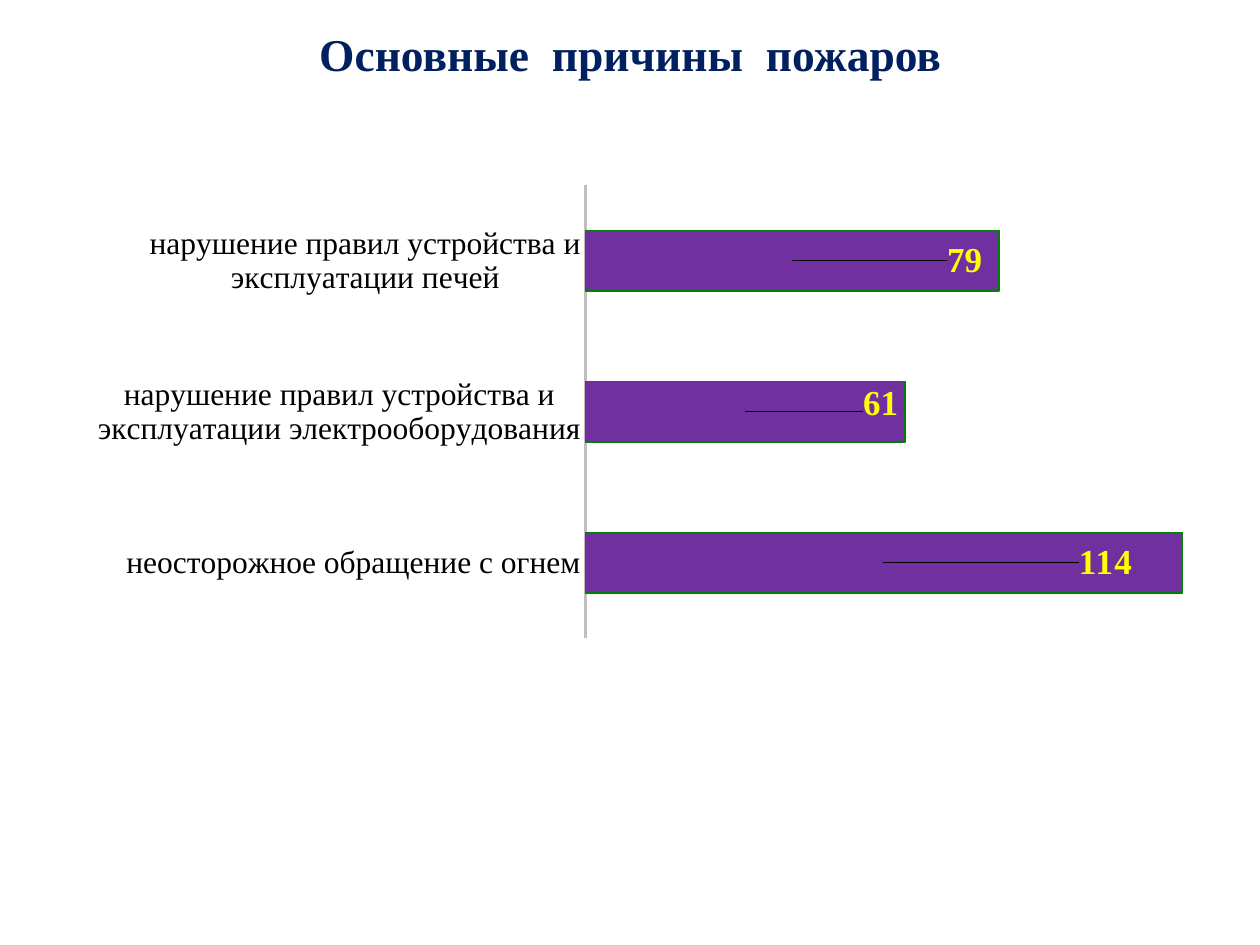
from lxml.etree import SubElement
from pptx import Presentation
from pptx.chart.data import CategoryChartData
from pptx.dml.color import RGBColor
from pptx.enum.chart import XL_CHART_TYPE, XL_LABEL_POSITION, XL_TICK_MARK
from pptx.enum.text import MSO_AUTO_SIZE, PP_ALIGN
from pptx.oxml.ns import qn
from pptx.util import Inches, Pt

NAVY = RGBColor(0x00, 0x20, 0x60)
PURPLE = RGBColor(0x70, 0x30, 0xA0)
GREEN = RGBColor(0x00, 0x80, 0x00)
YELLOW = RGBColor(0xFF, 0xFF, 0x00)
GREY = RGBColor(0xBF, 0xBF, 0xBF)
BLACK = RGBColor(0x00, 0x00, 0x00)
FONT = "Times New Roman"

TITLE = "Основные  причины  пожаров"
CAUSES = [
    ("неосторожное обращение с огнем", 114, (0.18, 0)),
    ("нарушение правил устройства и эксплуатации электрооборудования", 61, (0.11, -0.01)),
    ("нарушение правил устройства и эксплуатации печей", 79, (0.14, 0)),
]
TITLE_BOX = (1.02, 0.16, 7.97, 0.54)
CHART_BOX = (-0.04, 0.83, 9.77, 6.42)
PLOT_SHARES = {"x": 0.48, "y": 0.1, "w": 0.51, "h": 0.56}


def set_font(font, size, color, bold=False):
    formats = {"name": FONT, "size": Pt(size), "bold": bold}
    for attribute, value in formats.items():
        setattr(font, attribute, value)
    font.color.rgb = color


def fill_layout(layout, values):
    manual = SubElement(layout, qn("c:manualLayout"))
    for tag, value in values.items():
        SubElement(manual, qn(f"c:{tag}")).set("val", str(value))


def add_title(slide):
    title = slide.shapes.add_textbox(*map(Inches, TITLE_BOX))
    frame = title.text_frame
    frame.word_wrap = True
    frame.auto_size = MSO_AUTO_SIZE.SHAPE_TO_FIT_TEXT
    heading = frame.paragraphs[0]
    heading.alignment = PP_ALIGN.CENTER
    run = heading.add_run()
    run.text = TITLE
    set_font(run.font, 26, NAVY, True)


def add_causes_chart(slide):
    data = CategoryChartData()
    data.categories = [cause for cause, _, _ in CAUSES]
    data.add_series("Series 1", [fires for _, fires, _ in CAUSES])
    chart = slide.shapes.add_chart(
        XL_CHART_TYPE.BAR_STACKED, *map(Inches, CHART_BOX), data
    ).chart
    chart.has_legend = False
    chart.has_title = False
    set_font(chart.font, 10, BLACK)

    causes_axis = chart.category_axis
    causes_axis.major_tick_mark = XL_TICK_MARK.NONE
    causes_axis.format.line.color.rgb = GREY
    causes_axis.format.line.width = Pt(1.5)
    set_font(causes_axis.tick_labels.font, 18, BLACK)

    fires_axis = chart.value_axis
    fires_axis.minimum_scale, fires_axis.maximum_scale = 0, 120
    fires_axis.has_major_gridlines = False
    fires_axis.visible = False

    plot = chart.plots[0]
    plot.gap_width, plot.overlap = 150, 100
    plot.vary_by_categories = False
    bars = plot.series[0]
    bars.format.fill.solid()
    bars.format.fill.fore_color.rgb = PURPLE
    bars.format.line.color.rgb = GREEN
    bars.format.line.width = Pt(0.75)

    bars.data_labels.show_value = True
    set_font(bars.data_labels.font, 20, YELLOW, True)
    for index in range(len(CAUSES)):
        label = bars.points[index].data_label
        set_font(label.font, 20, YELLOW, True)
        label.position = XL_LABEL_POSITION.CENTER

    for label, (_, _, (x, y)) in zip(chart.element.xpath(".//c:dLbl"), CAUSES):
        layout = SubElement(label, qn("c:layout"))
        label.find(qn("c:idx")).addnext(layout)
        fill_layout(layout, {"x": x, "y": y})

    plot_area = chart.element.xpath(".//c:plotArea")[0]
    layout = plot_area.find(qn("c:layout"))
    if layout is None:
        layout = SubElement(plot_area, qn("c:layout"))
        plot_area.insert(0, layout)
    fill_layout(
        layout,
        {"layoutTarget": "inner", "xMode": "edge", "yMode": "edge", **PLOT_SHARES},
    )


def main():
    deck = Presentation()
    deck.slide_width, deck.slide_height = Inches(10), Inches(7.5)
    slide = deck.slides.add_slide(deck.slide_layouts[6])
    add_title(slide)
    add_causes_chart(slide)
    deck.save("out.pptx")


if __name__ == "__main__":
    main()
